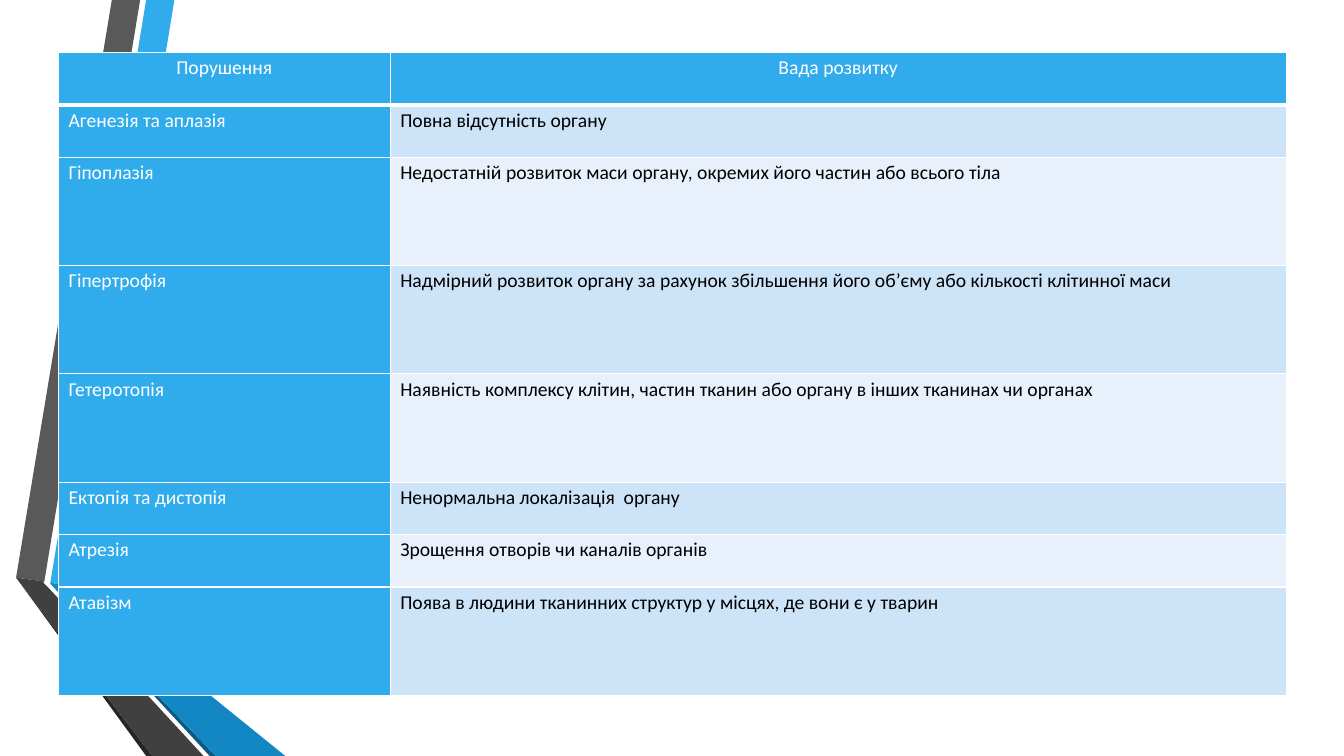
from lxml import etree
from pptx import Presentation
from pptx.dml.color import RGBColor
from pptx.enum.text import PP_ALIGN
from pptx.oxml.ns import qn
from pptx.util import Pt

CENTER, JUSTIFY = PP_ALIGN.CENTER, PP_ALIGN.JUSTIFY

WHITE = RGBColor(0xFF, 0xFF, 0xFF)
BLACK = RGBColor(0x00, 0x00, 0x00)
BLUE = RGBColor(0x30, 0xAC, 0xEC)
MID_BLUE = RGBColor(0x12, 0x87, 0xC3)
DEEP_BLUE = RGBColor(0x0C, 0x5A, 0x82)
GREY = RGBColor(0x59, 0x59, 0x59)
DARK_GREY = RGBColor(0x40, 0x40, 0x40)
CHARCOAL = RGBColor(0x26, 0x26, 0x26)
BAND_COLORS = (RGBColor(0xCD, 0xE3, 0xF8), RGBColor(0xE8, 0xF1, 0xFB))

# Ribbon pieces from back to front, corners in points
RIBBONS = [
    (BLUE, [(36, 416.2), (55.4, 419.8), (124.6, 0), (104.4, 0)]),
    (GREY, [(100.1, 0), (79.9, 0), (11.5, 412.6), (31.7, 415.4)]),
    (CHARCOAL, [(11.5, 412.6), (104.4, 540), (108.7, 540)]),
    (DEEP_BLUE, [(36, 416.9), (149.8, 540), (154.1, 540)]),
    (MID_BLUE, [(36, 416.2), (36, 416.9), (154.1, 540), (203.8, 540),
                (55.4, 419.8)]),
    (DARK_GREY, [(145.4, 540), (34.6, 419.8), (31, 416.2), (31.7, 415.4),
                 (11.5, 412.6), (108.7, 540)]),
]

SHORT_ROW, TALL_ROW = 37.44, 77.4
COLUMN_WIDTHS = (236.9, 640.1)
ROWS = [
    (SHORT_ROW, "Порушення", "Вада розвитку"),
    (SHORT_ROW, "Агенезія та аплазія", "Повна відсутність органу"),
    (TALL_ROW, "Гіпоплазія",
     "Недостатній розвиток маси органу, окремих його частин або всього тіла"),
    (TALL_ROW, "Гіпертрофія",
     "Надмірний розвиток органу за рахунок збільшення його об’єму "
     "або кількості клітинної маси"),
    (TALL_ROW, "Гетеротопія",
     "Наявність комплексу клітин, частин тканин або органу "
     "в інших тканинах чи органах"),
    (SHORT_ROW, "Ектопія та дистопія", "Ненормальна локалізація  органу"),
    (SHORT_ROW, "Атрезія", "Зрощення отворів чи каналів органів"),
    (TALL_ROW, "Атавізм",
     "Поява в людини тканинних структур у місцях, де вони є у тварин"),
]


def write_text(text_frame, text, *, font, size, color, align, line_spacing):
    paragraph = text_frame.paragraphs[0]
    paragraph.alignment = align
    paragraph.line_spacing = line_spacing
    run = paragraph.add_run()
    run.text = text
    run.font.name = font
    run.font.size = Pt(size)
    run.font.color.rgb = color


class SlideBuilder:
    font = "Calibri"
    size = 14
    line_spacing = 1.15
    cell_margin = 7.2
    border_color = WHITE

    def __init__(self, slide):
        self.slide = slide

    def ribbon(self, color, corners):
        start, *others = [(Pt(x), Pt(y)) for x, y in corners]
        builder = self.slide.shapes.build_freeform(*start)
        builder.add_line_segments(others, close=True)
        shape = builder.convert_to_shape()
        shape.shadow.inherit = False
        shape.fill.solid()
        shape.fill.fore_color.rgb = color
        shape.line.fill.background()

    def borders(self, cell, bottom_width):
        properties = cell._tc.get_or_add_tcPr()
        widths = {"a:lnL": 1, "a:lnR": 1, "a:lnT": 1, "a:lnB": bottom_width}
        for position, (tag, width) in enumerate(widths.items()):
            line = etree.Element(qn(tag), w=str(Pt(width)))
            fill = etree.SubElement(line, qn("a:solidFill"))
            etree.SubElement(fill, qn("a:srgbClr"), val=str(self.border_color))
            properties.insert(position, line)

    def cell(self, cell, text, *, fill, color, align, bottom_width):
        cell.margin_left = cell.margin_right = Pt(self.cell_margin)
        cell.margin_top = cell.margin_bottom = Pt(0)
        cell.fill.solid()
        cell.fill.fore_color.rgb = fill
        self.borders(cell, bottom_width)
        write_text(cell.text_frame, text, font=self.font, size=self.size,
                   color=color, align=align, line_spacing=self.line_spacing)

    def table(self, left, top, column_widths, rows):
        height = sum(row[0] for row in rows)
        table = self.slide.shapes.add_table(
            len(rows), len(column_widths), Pt(left), Pt(top),
            Pt(sum(column_widths)), Pt(height)).table
        table.first_row = table.horz_banding = False
        for column, width in zip(table.columns, column_widths):
            column.width = Pt(width)
        for row_index, (row_height, *texts) in enumerate(rows):
            table.rows[row_index].height = Pt(row_height)
            is_header = row_index == 0
            for column_index, text in enumerate(texts):
                is_accent = is_header or column_index == 0
                self.cell(
                    table.cell(row_index, column_index), text,
                    fill=BLUE if is_accent else BAND_COLORS[(row_index - 1) % 2],
                    color=WHITE if is_accent else BLACK,
                    align=CENTER if is_header else JUSTIFY,
                    bottom_width=3 if is_header else 1)


def main():
    presentation = Presentation()
    presentation.slide_width, presentation.slide_height = Pt(960), Pt(540)
    slide = presentation.slides.add_slide(presentation.slide_layouts[6])
    builder = SlideBuilder(slide)

    # Folded ribbons on the left
    for color, corners in RIBBONS:
        builder.ribbon(color, corners)

    # Table of developmental defects
    builder.table(41.8, 37.44, COLUMN_WIDTHS, ROWS)

    presentation.save("out.pptx")


if __name__ == "__main__":
    main()
